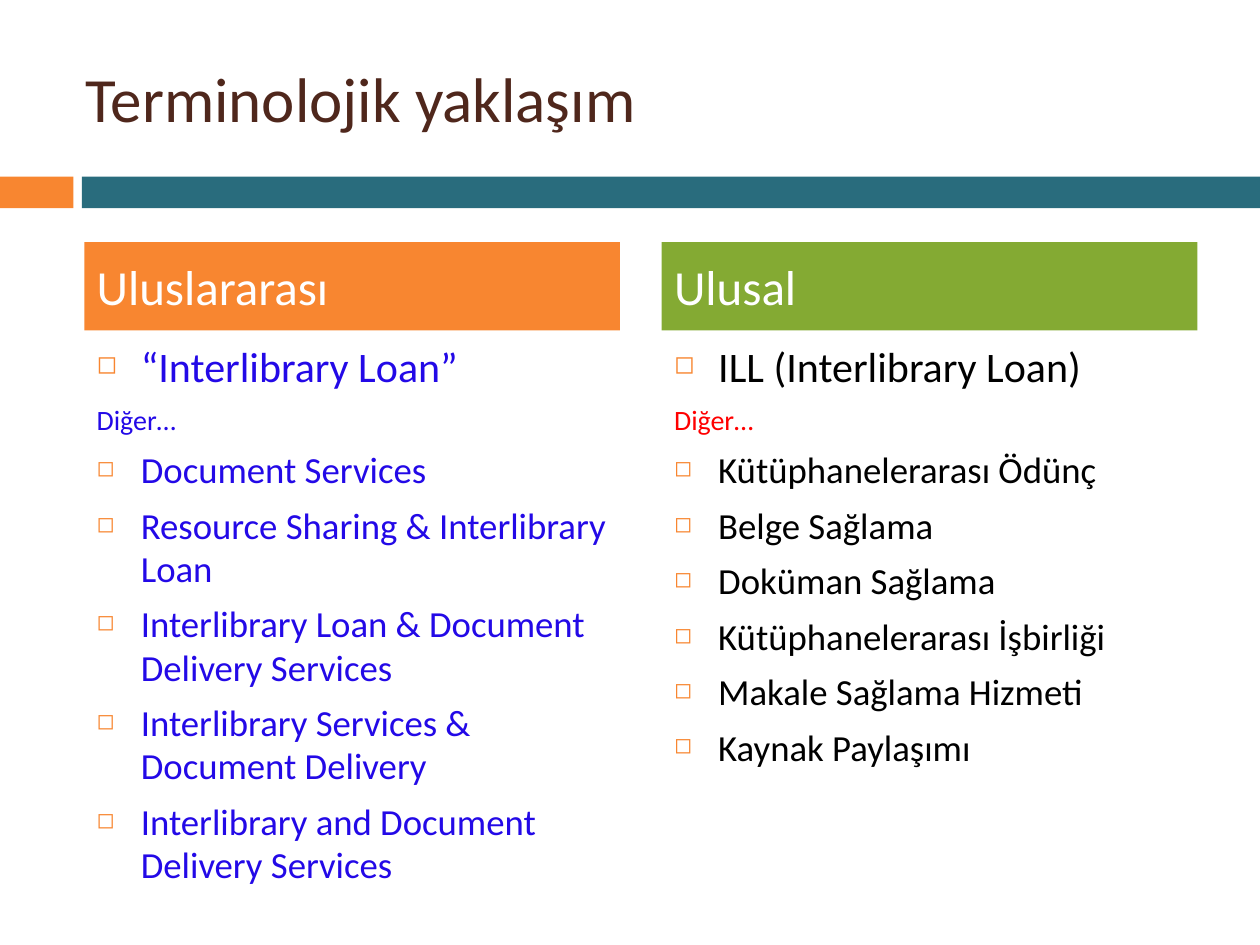
from lxml.etree import SubElement
from pptx import Presentation
from pptx.dml.color import RGBColor
from pptx.enum.shapes import MSO_SHAPE
from pptx.enum.text import MSO_ANCHOR, PP_ALIGN
from pptx.oxml.ns import qn
from pptx.util import Cm, Pt

FONT = "Calibri"
ORANGE = RGBColor(0xF8, 0x86, 0x30)
TEAL = RGBColor(0x29, 0x6C, 0x7D)
GREEN = RGBColor(0x84, 0xAA, 0x33)
BROWN = RGBColor(0x4F, 0x27, 0x1C)
BLUE = RGBColor(0x23, 0x09, 0xE7)
RED = RGBColor(0xFF, 0x00, 0x00)
BLACK = RGBColor(0x00, 0x00, 0x00)
WHITE = RGBColor(0xFF, 0xFF, 0xFF)

COLUMN_WIDTH = 10.8
INDENT = Cm(0.89)

# left edge, heading, heading fill, main term, text colour, "other" colour, terms
COLUMNS = [
    (1.7, "Uluslararası", ORANGE, "“Interlibrary Loan”", BLUE, BLUE, [
        "Document Services",
        "Resource Sharing & Interlibrary Loan",
        "Interlibrary Loan & Document Delivery Services",
        "Interlibrary Services & Document Delivery",
        "Interlibrary and Document Delivery Services",
    ]),
    (13.34, "Ulusal", GREEN, "ILL (Interlibrary Loan)", BLACK, RED, [
        "Kütüphanelerarası Ödünç",
        "Belge Sağlama",
        "Doküman Sağlama",
        "Kütüphanelerarası İşbirliği",
        "Makale Sağlama Hizmeti",
        "Kaynak Paylaşımı",
    ]),
]


def add_bullet(p):
    """Give the paragraph a small orange square and a hanging indent."""
    pPr = p._p.get_or_add_pPr()
    pPr.set("marL", str(INDENT))
    pPr.set("indent", str(-INDENT))
    colour = SubElement(pPr, qn("a:buClr"))
    SubElement(colour, qn("a:srgbClr"), val=str(ORANGE))
    SubElement(pPr, qn("a:buSzPct"), val="60000")
    SubElement(pPr, qn("a:buChar"), char="◻")


def write(tf, text, size, color, before=0, line=None, bullet=False):
    """Write one paragraph, using the empty first one when there is one."""
    p = tf.paragraphs[0] if not tf.text else tf.add_paragraph()
    p.alignment = PP_ALIGN.LEFT
    p.space_before = Pt(before)
    if line:
        p.line_spacing = line
    if bullet:
        add_bullet(p)
    r = p.add_run()
    r.text = text
    r.font.name = FONT
    r.font.size = Pt(size)
    r.font.color.rgb = color


def add_rect(s, left, top, width, height, fill):
    sp = s.shapes.add_shape(MSO_SHAPE.RECTANGLE, Cm(left), Cm(top), Cm(width), Cm(height))
    sp.shadow.inherit = False
    sp.fill.solid()
    sp.fill.fore_color.rgb = fill
    sp.line.fill.background()
    return sp


def add_text_box(s, left, top, width, height, anchor=MSO_ANCHOR.TOP):
    tf = s.shapes.add_textbox(Cm(left), Cm(top), Cm(width), Cm(height)).text_frame
    tf.word_wrap = True
    tf.vertical_anchor = anchor
    return tf


def add_column(s, left, heading, fill, main_term, color, other_color, terms):
    tf = add_text_box(s, left, 6.78, COLUMN_WIDTH, 9.96)
    tf.margin_right = Cm(0.2)
    write(tf, main_term, 24, color, before=7, line=0.98, bullet=True)
    write(tf, "Diğer…", 16, other_color, before=7, line=0.98)
    for term in terms:
        write(tf, term, 21, color, before=7, line=0.98, bullet=True)

    header = add_rect(s, left, 4.88, COLUMN_WIDTH, 1.78, fill)
    header.text_frame.vertical_anchor = MSO_ANCHOR.MIDDLE
    write(header.text_frame, heading, 28, WHITE, before=7)


def main():
    prs = Presentation()
    prs.slide_width, prs.slide_height = Cm(25.4), Cm(19.05)
    s = prs.slides.add_slide(prs.slide_layouts[6])

    add_rect(s, 0, 3.56, 1.48, 0.64, ORANGE)
    add_rect(s, 1.65, 3.56, 23.75, 0.64, TEAL)
    title = add_text_box(s, 1.48, 0.76, 22.66, 2.41, MSO_ANCHOR.MIDDLE)
    write(title, "Terminolojik yaklaşım", 36, BROWN)
    for column in COLUMNS:
        add_column(s, *column)

    prs.save("out.pptx")


if __name__ == "__main__":
    main()
